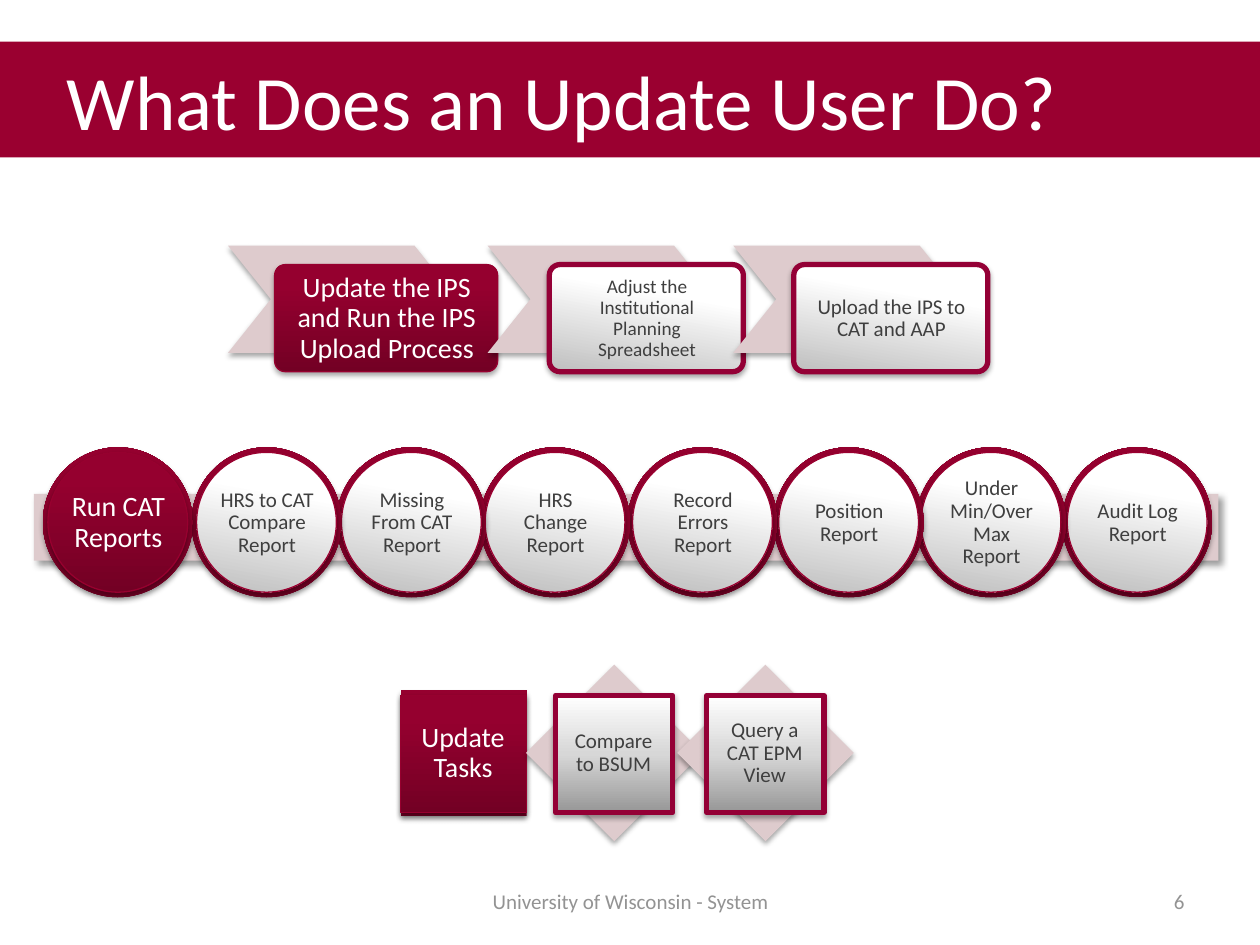
from lxml.etree import SubElement as Sub
from pptx import Presentation
from pptx.dml.color import RGBColor
from pptx.enum.shapes import MSO_SHAPE as Kind
from pptx.enum.text import MSO_ANCHOR as Anchor, PP_ALIGN as Align
from pptx.oxml.ns import qn
from pptx.util import Inches, Pt

RED = RGBColor(0x9A, 0x00, 0x30)
EDGE = RGBColor(0x97, 0x00, 0x2F)
FRAME = RGBColor(0x94, 0x00, 0x36)
DARK = RGBColor(0x73, 0x00, 0x24)
DEEP = RGBColor(0x95, 0x00, 0x2F)
WINE = RGBColor(0x96, 0x00, 0x2F)
PINK = RGBColor(0xDE, 0xCB, 0xCD)
WHITE = RGBColor(0xFF, 0xFF, 0xFF)
BLACK = RGBColor(0x00, 0x00, 0x00)
SILVER = RGBColor(0xBF, 0xBF, 0xBF)
STEEL = RGBColor(0x97, 0x97, 0x97)
PALE = RGBColor(0xD7, 0xD7, 0xD7)
INK = RGBColor(0x3F, 0x3F, 0x3F)
GRAY = RGBColor(0x93, 0x93, 0x93)

MAROON = (270, [(0, DARK), (80, DEEP), (100, WINE)])
LIGHT = (100, [(30, WHITE), (100, SILVER)])
METAL = (270, [(0, STEEL), (50, PALE), (100, WHITE)])
SOFT = (35, 3.1, 1.8, 90)
WIDE = (40, 4, 3, 45)

STEPS = [
    (1.81, 2.18, 1.77, "Update the IPS and Run the IPS Upload Process", 16),
    (3.87, 4.36, 1.54, "Adjust the Institutional Planning Spreadsheet", 11),
    (5.82, 6.3, 1.54, "Upload the IPS to CAT and AAP", 12),
]
REPORTS = [
    (0.34, "Run CAT Reports"),
    (1.52, "HRS to CAT Compare Report"),
    (2.67, "Missing From CAT Report"),
    (3.81, "HRS Change Report"),
    (4.98, "Record Errors Report"),
    (6.14, "Position Report"),
    (7.27, "Under Min/Over Max Report"),
    (8.43, "Audit Log Report"),
]
TASKS = [(4.38, "Compare to BSUM"), (5.58, "Query a CAT EPM View")]


def add_grad(props, look):
    angle, stops = look
    grad = Sub(props, qn("a:gradFill"), rotWithShape="0")
    items = Sub(grad, qn("a:gsLst"))
    for pos, color in stops:
        stop = Sub(items, qn("a:gs"), pos=str(pos * 1000))
        Sub(stop, qn("a:srgbClr"), val=str(color))
    Sub(grad, qn("a:lin"), ang=str(angle * 60000), scaled="0")


def add_shade(props, shade):
    alpha, blur, dist, angle = shade
    effects = Sub(props, qn("a:effectLst"))
    outer = Sub(effects, qn("a:outerShdw"), blurRad=str(Pt(blur)),
                dist=str(Pt(dist)), dir=str(angle * 60000),
                algn="ctr", rotWithShape="0")
    color = Sub(outer, qn("a:srgbClr"), val=str(BLACK))
    Sub(color, qn("a:alpha"), val=str(alpha * 1000))


def add_form(group, kind, box, look, line=None, width=0.75, turn=0,
             adjust=None, shade=SOFT):
    shape = group.add_shape(kind, *map(Inches, box))
    shape.rotation = turn
    if adjust is not None:
        shape.adjustments[0] = adjust
    props = shape._element.spPr
    if isinstance(look, RGBColor):
        shape.fill.solid()
        shape.fill.fore_color.rgb = look
    else:
        add_grad(props, look)
    if line is None:
        shape.line.fill.background()
    else:
        shape.line.color.rgb = line
        shape.line.width = Pt(width)
    add_shade(props, shade)


def set_font(para, size, color):
    for run in para.runs:
        run.font.name = "Calibri"
        run.font.size = Pt(size)
        run.font.color.rgb = color


def add_label(shapes, box, text, size, color, pad=0.02, align=Align.CENTER,
              space=0.9):
    frame = shapes.add_textbox(*map(Inches, box)).text_frame
    frame.word_wrap = True
    frame.vertical_anchor = Anchor.MIDDLE
    frame.margin_left = frame.margin_right = Inches(pad)
    frame.margin_top = frame.margin_bottom = Inches(pad)
    frame.text = text
    para = frame.paragraphs[0]
    para.alignment = align
    para.line_spacing = space
    set_font(para, size, color)


def add_title(slide):
    title = slide.shapes.title
    title.left, title.top = Inches(0), Inches(0.33)
    title.width, title.height = Inches(10), Inches(0.92)
    title.fill.solid()
    title.fill.fore_color.rgb = RED
    frame = title.text_frame
    frame.text = "What Does an Update User Do?"
    frame.margin_left = Inches(0.53)
    frame.vertical_anchor = Anchor.MIDDLE
    para = frame.paragraphs[0]
    para.alignment = Align.LEFT
    set_font(para, 44, WHITE)


def add_reports(group):
    add_form(group, Kind.RECTANGLE, (0.27, 3.92, 9.4, 0.53), PINK, shade=WIDE)
    for left, text in reversed(REPORTS):
        first = left == REPORTS[0][0]
        last = left == REPORTS[-1][0]
        add_form(group, Kind.OVAL, (left, 3.55, 1.19, 1.19), MAROON,
                 turn=0 if last else 45)
        add_form(group, Kind.OVAL, (left + 0.04, 3.59, 1.11, 1.11),
                 MAROON if first else LIGHT, EDGE if first else RED)
        add_label(group, (left + 0.2, 3.75, 0.8, 0.8), text,
                  16 if first else 12, WHITE if first else INK)


def add_steps(group):
    for tip, left, width, text, size in STEPS:
        first = left == STEPS[0][1]
        add_form(group, Kind.CHEVRON, (tip, 1.95, 1.82, 0.85), PINK,
                 adjust=0.4)
        add_form(group, Kind.ROUNDED_RECTANGLE, (left, 2.1, width, 0.85),
                 MAROON if first else LIGHT, EDGE if first else FRAME,
                 0.75 if first else 3, adjust=0.1)
        add_label(group, (left + 0.03, 2.13, width - 0.05, 0.8), text, size,
                  WHITE if first else INK, 0.12 if first else 0.09)


def add_tasks(group):
    add_form(group, Kind.RECTANGLE, (3.18, 5.48, 1, 1), MAROON)
    add_form(group, Kind.RECTANGLE, (3.18, 5.52, 1, 0.93), MAROON, EDGE)
    add_label(group, (3.32, 5.65, 0.71, 0.66), "Update Tasks", 16, WHITE)
    for left, text in TASKS:
        add_form(group, Kind.RECTANGLE, (left, 5.48, 0.99, 0.99), PINK,
                 turn=225)
        add_form(group, Kind.RECTANGLE, (left + 0.03, 5.52, 0.93, 0.93),
                 METAL, FRAME, 3)
        add_label(group, (left + 0.16, 5.65, 0.66, 0.66), text, 12, INK)


def main():
    deck = Presentation()
    deck.slide_width, deck.slide_height = Inches(10), Inches(7.5)
    slide = deck.slides.add_slide(deck.slide_layouts[5])
    add_title(slide)
    for draw in (add_reports, add_steps, add_tasks):
        draw(slide.shapes.add_group_shape().shapes)
    add_label(slide.shapes, (3.42, 6.95, 3.17, 0.4),
              "University of Wisconsin - System", 12, GRAY, 0.1, space=1.0)
    add_label(slide.shapes, (7.17, 6.95, 2.33, 0.4), "6", 12, GRAY, 0.1,
              Align.RIGHT, 1.0)
    deck.save("out.pptx")


if __name__ == "__main__":
    main()
